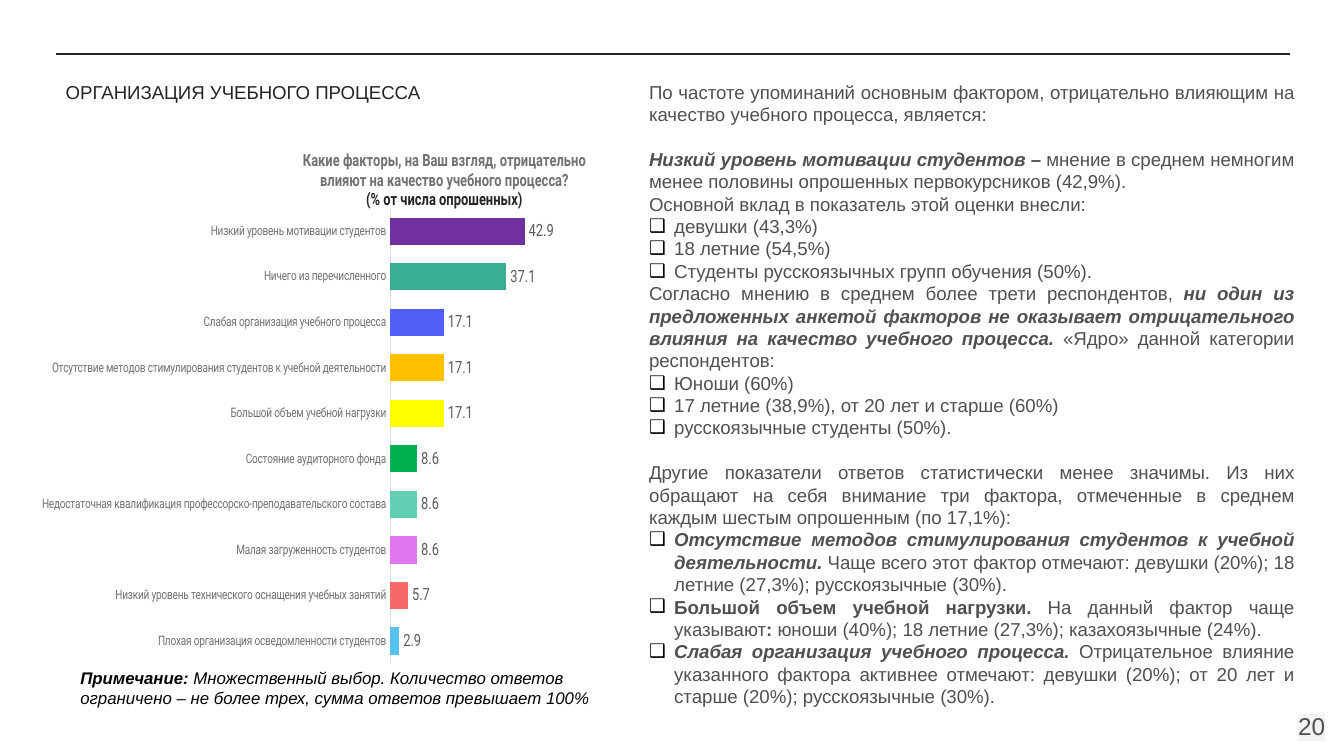
from dataclasses import dataclass

from lxml import etree
from pptx import Presentation
from pptx.chart.data import CategoryChartData
from pptx.dml.color import RGBColor
from pptx.enum import chart as charts, shapes, text
from pptx.oxml import ns
from pptx.util import Pt


@dataclass(frozen=True)
class Theme:
    sans: str = "Arial"
    chart_font: str = "Roboto"
    ink: str = "242424"
    body: str = "505050"
    muted: str = "717171"
    label: str = "5B5B5B"
    rule: str = "DEDEDE"
    black: str = "000000"
    highlight: str = "F3F3F3"
    bar: str = "62CFB5"
    text_size: float = 10
    note_size: float = 9
    axis_size: float = 7
    number_size: float = 13
    line_height: float = 12
    inset: float = 7.2
    bullet_indent: float = 13.5


def set_all(obj, values):
    for name, value in values.items():
        setattr(obj, name, value)


def add_xml(parent, tag, **attrs):
    el = etree.SubElement(parent, ns.qn(tag))
    for name, value in attrs.items():
        el.set(name, str(value))
    return el


class SlideBuilder:
    def __init__(self, prs, theme):
        self.theme = theme
        self.slide = prs.slides.add_slide(prs.slide_layouts[1])

    def style(self, font, size, color, name=None, **flags):
        set_all(font, {"size": Pt(size), "name": name or self.theme.sans, **flags})
        font.color.rgb = RGBColor.from_string(color)

    def place(self, sp, box, inset=None, inset_y=None):
        set_all(sp, dict(zip(("left", "top", "width", "height"), map(Pt, box))))
        x = self.theme.inset if inset is None else inset
        y = x if inset_y is None else inset_y
        tf = sp.text_frame
        set_all(tf, {"margin_left": Pt(x), "margin_right": Pt(x),
                     "margin_top": Pt(y), "margin_bottom": Pt(y),
                     "word_wrap": True, "auto_size": text.MSO_AUTO_SIZE.NONE,
                     "vertical_anchor": text.MSO_ANCHOR.TOP})
        return tf

    def runs(self, p, parts, size, color):
        for words, marks in parts:
            r = p.add_run()
            r.text = words
            self.style(r.font, size, color, bold="b" in marks, italic="i" in marks)

    def rule(self, x1, x2, y):
        line = self.slide.shapes.add_connector(
            shapes.MSO_CONNECTOR.STRAIGHT, Pt(x1), Pt(y), Pt(x2), Pt(y))
        line.line.width = Pt(0.75)
        line.line.color.rgb = RGBColor.from_string(self.theme.ink)
        add_xml(line._element.spPr, "a:effectLst")

    def title(self, words, box):
        p = self.place(self.slide.shapes.title, box).paragraphs[0]
        p.alignment = text.PP_ALIGN.LEFT
        self.runs(p, [(words, "")], self.theme.text_size, self.theme.ink)

    def body(self, items, box):
        t = self.theme
        tf = self.place(self.slide.placeholders[1], box)
        for i, (kind, parts) in enumerate(items):
            p = tf.add_paragraph() if i else tf.paragraphs[0]
            set_all(p, {"alignment": text.PP_ALIGN.JUSTIFY,
                        "line_spacing": Pt(t.line_height), "space_after": Pt(0),
                        "space_before": Pt(t.line_height if kind == "gap" else 0)})
            self.bullet(p, kind == "bullet")
            self.runs(p, parts, t.text_size, t.body)

    def bullet(self, p, shown):
        pPr = p._p.get_or_add_pPr()
        indent = Pt(self.theme.bullet_indent) if shown else 0
        pPr.set("marL", str(indent))
        pPr.set("indent", str(-indent))
        if shown:
            add_xml(add_xml(pPr, "a:buClr"), "a:srgbClr", val=self.theme.black)
            add_xml(pPr, "a:buChar", char="❑")
        else:
            add_xml(pPr, "a:buNone")

    def text(self, parts, box, size, color, inset_y=None,
             align=text.PP_ALIGN.LEFT, highlight=None):
        sp = self.slide.shapes.add_textbox(0, 0, 0, 0)
        p = self.place(sp, box, inset_y=inset_y).paragraphs[0]
        p.alignment = align
        self.runs(p, parts, size, color)
        if highlight:
            for r in p.runs:
                rPr = r._r.get_or_add_rPr()
                mark = add_xml(rPr, "a:highlight")
                add_xml(mark, "a:srgbClr", val=highlight)
                rPr.find(ns.qn("a:solidFill")).addnext(mark)

    def layout(self, parent, after, **values):
        old = parent.find(ns.qn("c:layout"))
        if old is not None:
            parent.remove(old)
        layout = add_xml(parent, "c:layout")
        manual = add_xml(layout, "c:manualLayout")
        for name, value in values.items():
            add_xml(manual, f"c:{name}", val=value)
        if after is None:
            parent.insert(0, layout)
        else:
            after.addnext(layout)

    def bar_chart(self, rows, title, box):
        t = self.theme
        data = CategoryChartData()
        data.categories = [name for name, _, _ in rows]
        data.add_series("Series 1", [value for _, value, _ in rows])
        chart = self.slide.shapes.add_chart(
            charts.XL_CHART_TYPE.BAR_CLUSTERED, *map(Pt, box), data).chart
        chart.has_legend = False
        self.style(chart.font, t.text_size, t.ink)
        tf = chart.chart_title.text_frame
        for i, (words, color) in enumerate(title):
            p = tf.add_paragraph() if i else tf.paragraphs[0]
            r = p.add_run()
            r.text = words
            self.style(r.font, t.note_size, color, t.chart_font, bold=True)
        heading = chart.chart_title._element
        self.layout(heading, heading.find(ns.qn("c:tx")),
                    xMode="edge", yMode="edge", x=0.34, y=0.03)
        self.layout(chart._chartSpace.chart.plotArea, None, layoutTarget="inner",
                    xMode="edge", yMode="edge", x=0.555, y=0.146, w=0.373, h=0.824)
        axis = chart.category_axis
        set_all(axis, {"major_tick_mark": charts.XL_TICK_MARK.NONE,
                       "minor_tick_mark": charts.XL_TICK_MARK.NONE})
        self.style(axis.tick_labels.font, t.axis_size, t.muted, t.chart_font)
        axis.format.line.width = Pt(0.75)
        axis.format.line.color.rgb = RGBColor.from_string(t.rule)
        set_all(chart.value_axis, {"visible": False, "has_major_gridlines": False,
                                   "minimum_scale": 0})
        plot = chart.plots[0]
        set_all(plot, {"gap_width": 66, "vary_by_categories": False,
                       "has_data_labels": True})
        set_all(plot.data_labels, {"show_value": True,
                                   "position": charts.XL_LABEL_POSITION.OUTSIDE_END})
        self.style(plot.data_labels.font, t.note_size, t.label, t.chart_font)
        for i, (_, _, color) in enumerate(rows):
            fill = plot.series[0].points[i].format.fill
            fill.solid()
            fill.fore_color.rgb = RGBColor.from_string(color)


FACTORS = [
    ("Плохая организация осведомленности студентов", 2.9, "57C2EC"),
    ("Низкий уровень технического оснащения учебных занятий", 5.7, "F7686B"),
    ("Малая загруженность студентов", 8.6, "E078F1"),
    ("Недостаточная квалификация профессорско-преподавательского состава", 8.6, Theme.bar),
    ("Состояние аудиторного фонда", 8.6, "00B050"),
    ("Большой объем учебной нагрузки", 17.1, "FFFF00"),
    ("Отсутствие методов стимулирования студентов к учебной деятельности", 17.1, "FFC000"),
    ("Слабая организация учебного процесса", 17.1, "4F5FF7"),
    ("Ничего из перечисленного", 37.1, "36AF92"),
    ("Низкий уровень мотивации студентов", 42.9, "7030A0"),
]
FINDINGS = [
    ("plain", [("По частоте упоминаний основным фактором, отрицательно влияющим на качество учебного процесса, является:", "")]),
    ("gap", [("Низкий уровень мотивации студентов – ", "bi"),
             ("мнение в среднем немногим менее половины опрошенных первокурсников (42,9%).", "")]),
    ("plain", [("Основной вклад в показатель этой оценки внесли:", "")]),
    ("bullet", [("девушки (43,3%)", "")]),
    ("bullet", [("18 летние (54,5%)", "")]),
    ("bullet", [("Студенты русскоязычных групп обучения (50%).", "")]),
    ("plain", [("Согласно мнению в среднем более трети респондентов, ", ""),
               ("ни один из предложенных анкетой факторов не оказывает отрицательного влияния на качество учебного процесса. ", "bi"),
               ("«Ядро» данной категории респондентов:", "")]),
    ("bullet", [("Юноши (60%)", "")]),
    ("bullet", [("17 летние (38,9%), от 20 лет и старше (60%)", "")]),
    ("bullet", [("русскоязычные студенты (50%).", "")]),
    ("gap", [("Другие показатели ответов статистически менее значимы. Из них обращают на себя внимание три фактора, отмеченные в среднем каждым шестым опрошенным (по 17,1%):", "")]),
    ("bullet", [("Отсутствие методов стимулирования студентов к учебной деятельности. ", "bi"),
                ("Чаще всего этот фактор отмечают: девушки (20%); 18 летние (27,3%); русскоязычные (30%).", "")]),
    ("bullet", [("Большой объем учебной нагрузки. ", "b"), ("На данный фактор чаще указывают", ""),
                (": ", "b"), ("юноши (40%); 18 летние (27,3%); казахоязычные (24%).", "")]),
    ("bullet", [("Слабая организация учебного процесса. ", "bi"),
                ("Отрицательное влияние указанного фактора активнее отмечают: девушки (20%); от 20 лет и старше (20%); русскоязычные (30%).", "")]),
]


def main():
    theme = Theme()
    prs = Presentation()
    set_all(prs, {"slide_width": Pt(720), "slide_height": Pt(405)})
    s = SlideBuilder(prs, theme)
    s.rule(30, 691, 29)
    s.title("ОРГАНИЗАЦИЯ УЧЕБНОГО ПРОЦЕССА", (28, 36, 257, 22))
    s.text([("20", "")], (674, 374, 43, 31), theme.number_size, theme.body,
           align=text.PP_ALIGN.RIGHT, highlight=theme.highlight)
    s.body(FINDINGS, (340.5, 36, 360, 348))
    s.bar_chart(FACTORS, [
        ("Какие факторы, на Ваш взгляд, отрицательно влияют на качество учебного процесса?", theme.muted),
        ("(% от числа опрошенных)", theme.ink)], (22.5, 68.5, 293, 296))
    s.text([("Примечание:", "bi"),
            (" Множественный выбор. Количество ответов ограничено – не более трех, сумма ответов превышает 100%", "i")],
           (36, 354, 304.5, 29), theme.note_size, theme.black, inset_y=3.6)
    prs.save("out.pptx")


if __name__ == "__main__":
    main()
